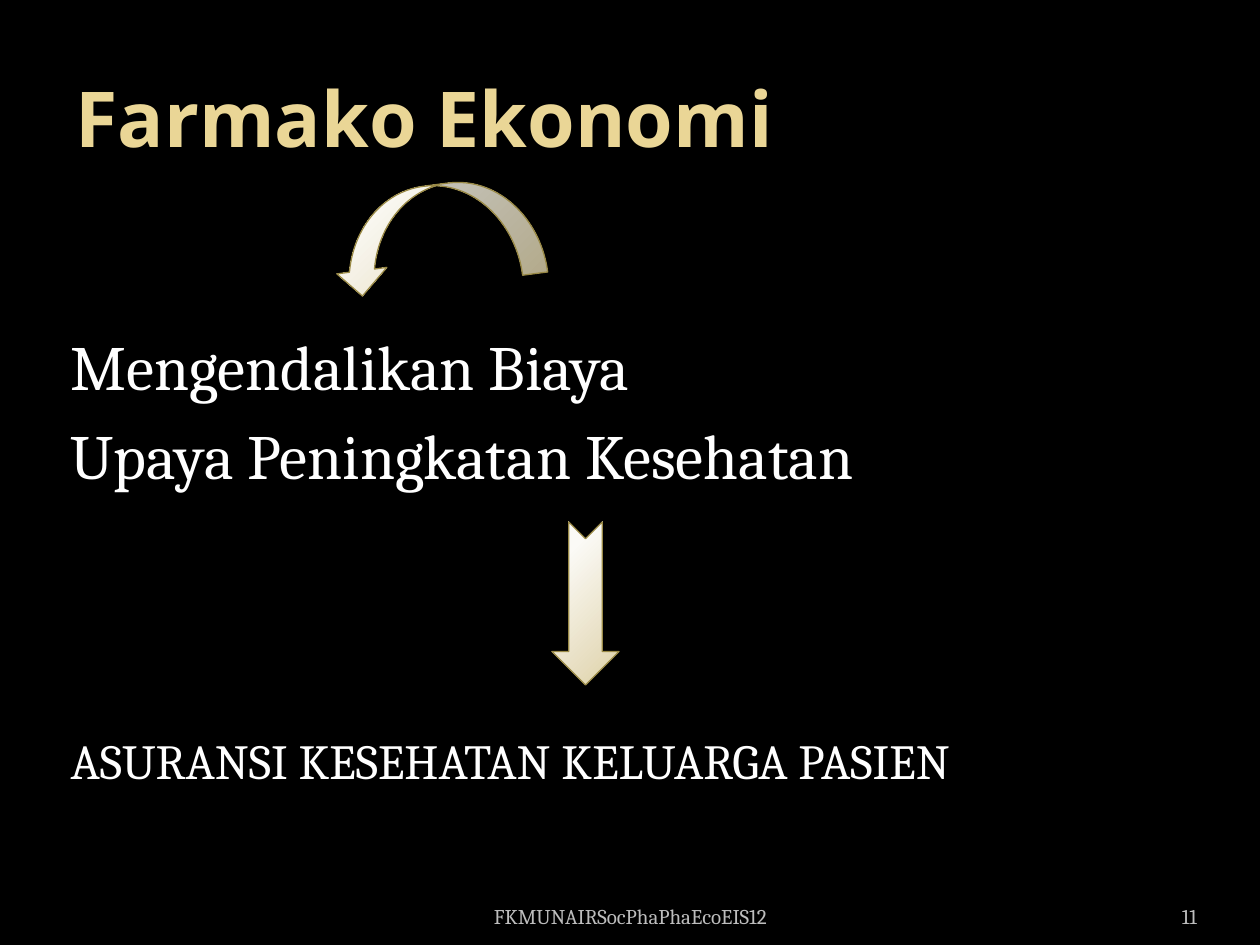
from lxml.etree import SubElement
from pptx import Presentation
from pptx.dml.color import RGBColor
from pptx.enum.shapes import MSO_SHAPE
from pptx.enum.text import MSO_ANCHOR, MSO_AUTO_SIZE, PP_ALIGN
from pptx.oxml.ns import qn
from pptx.util import Pt

SCALE = 914400 / 126
BLACK = RGBColor(0x00, 0x00, 0x00)
WHITE = RGBColor(0xFF, 0xFF, 0xFF)
GOLD = RGBColor(0xEA, 0xD6, 0x96)
GRAY = RGBColor(0xBD, 0xBD, 0xBD)
CREAM = RGBColor(0xFB, 0xFA, 0xF6)
SAND = RGBColor(0xDE, 0xD1, 0xA8)
OLIVE = RGBColor(0x99, 0x89, 0x46)
SERIF = "Cambria"
SANS = "Noto Sans"


def px(n):
    return round(n * SCALE)


def place(shape, box):
    shape.left, shape.top, shape.width, shape.height = map(px, box)


def write(para, text, size, color=WHITE, font=SERIF, bold=False,
          align=PP_ALIGN.LEFT, before=0):
    para.alignment = align
    para.space_before = Pt(before)
    run = para.add_run()
    run.text = text
    run.font.size = Pt(size)
    run.font.name = font
    run.font.bold = bold
    run.font.color.rgb = color


def add_title(slide, text):
    title = slide.shapes.title
    place(title, (63, 38, 1134, 158))
    frame = title.text_frame
    frame.auto_size = MSO_AUTO_SIZE.NONE
    frame.vertical_anchor = MSO_ANCHOR.MIDDLE
    write(frame.paragraphs[0], text, 44, color=GOLD, font=SANS, bold=True)


def add_list(slide, items):
    body = slide.placeholders[1]
    place(body, (39, 178, 1221, 692))
    frame = body.text_frame
    frame.auto_size = MSO_AUTO_SIZE.NONE
    frame.vertical_anchor = MSO_ANCHOR.TOP
    frame.margin_top = px(149)
    for i, (text, size, before) in enumerate(items):
        para = frame.add_paragraph() if i else frame.paragraphs[0]
        write(para, text, size, before=before)
        props = para._p.get_or_add_pPr()
        props.set("marL", str(px(76)))
        props.set("indent", str(px(-57)))
        SubElement(props, qn("a:buNone"))


def add_note(slide, text, box, align, side):
    frame = slide.shapes.add_textbox(*map(px, box)).text_frame
    frame.word_wrap = True
    frame.vertical_anchor = MSO_ANCHOR.BOTTOM
    frame.margin_left = frame.margin_right = px(side)
    write(frame.paragraphs[0], text, 12, color=GRAY, align=align)


def add_arrow(slide, kind, box, turn):
    arrow = slide.shapes.add_shape(kind, *map(px, box))
    arrow.rotation = turn
    arrow.shadow.inherit = False
    arrow.line.color.rgb = OLIVE
    arrow.line.width = Pt(0.75)
    arrow.fill.gradient()
    stops = arrow.fill.gradient_stops
    for stop, color, pos in zip(stops, (CREAM, SAND), (0.2, 1)):
        stop.color.rgb = color
        stop.position = pos
    grad = arrow._element.spPr.find(qn("a:gradFill"))
    grad.remove(grad.find(qn("a:lin")))
    glow = SubElement(grad, qn("a:path"), path="circle")
    SubElement(glow, qn("a:fillToRect"),
               l="-15000", t="-15000", r="115000", b="115000")


def main():
    prs = Presentation()
    prs.slide_width, prs.slide_height = px(1260), px(945)
    slide = prs.slides.add_slide(prs.slide_layouts[1])
    back = slide.background.fill
    back.solid()
    back.fore_color.rgb = BLACK
    add_title(slide, "Farmako Ekonomi")
    add_list(slide, [
        ("Mengendalikan Biaya", 36, 0),
        ("Upaya Peningkatan Kesehatan", 36, 8),
        ("ASURANSI KESEHATAN KELUARGA PASIEN", 28, 136),
    ])
    add_note(slide, "FKMUNAIRSocPhaPhaEcoEIS12", (431, 885, 399, 50),
             PP_ALIGN.CENTER, 13)
    add_note(slide, "11", (1092, 885, 105, 50), PP_ALIGN.RIGHT, 0)
    add_arrow(slide, MSO_SHAPE.CURVED_UP_ARROW, (330, 185, 212, 101), 172.6)
    add_arrow(slide, MSO_SHAPE.NOTCHED_RIGHT_ARROW, (504, 570, 163, 67), 90)
    prs.save("out.pptx")


if __name__ == "__main__":
    main()
